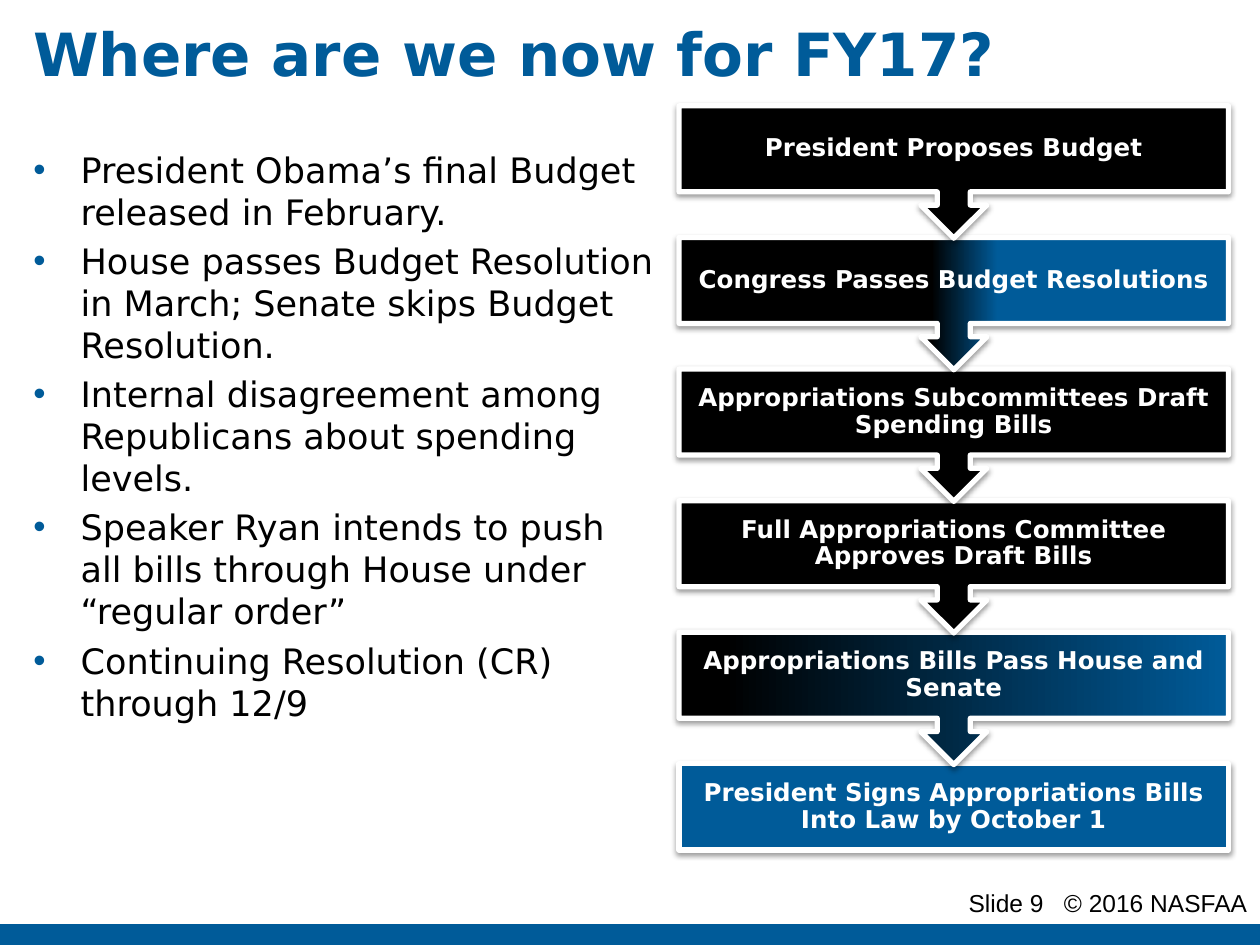
"""Build the FY17 budget status slide with its process flow."""
import pptx
import pptx.dml.color
import pptx.enum.shapes
import pptx.enum.text
import pptx.oxml
import pptx.oxml.ns
import pptx.util

Pt = pptx.util.Pt
RGBColor = pptx.dml.color.RGBColor
SHAPE = pptx.enum.shapes.MSO_SHAPE
ALIGN = pptx.enum.text.PP_ALIGN
ANCHOR = pptx.enum.text.MSO_ANCHOR

BLUE = RGBColor(0x00, 0x5B, 0x99)
BLACK = RGBColor(0x00, 0x00, 0x00)
WHITE = RGBColor(0xFF, 0xFF, 0xFF)
NAMESPACE = pptx.oxml.ns.nsdecls("a")

POINTS = [
    "President Obama’s final Budget released in February.",
    "House passes Budget Resolution in March; Senate skips Budget Resolution.",
    "Internal disagreement among Republicans about spending levels.",
    "Speaker Ryan intends to push all bills through House under “regular order”",
    "Continuing Resolution (CR) through 12/9",
]
SPLIT = (180, (0.46, BLACK), (0.58, BLUE))
FADE = (0, (0, BLUE), (0.92, BLACK))
STEPS = [
    ("President Proposes Budget", BLACK),
    ("Congress Passes Budget Resolutions", SPLIT),
    ("Appropriations Subcommittees Draft Spending Bills", BLACK),
    ("Full Appropriations Committee Approves Draft Bills", BLACK),
    ("Appropriations Bills Pass House and Senate", FADE),
    ("President Signs Appropriations Bills Into Law by October 1", BLUE),
]
FLOW_LEFT, FLOW_TOP, FLOW_WIDTH = 388, 60.5, 314
STEP_PITCH, CALLOUT_HEIGHT, STEP_HEIGHT = 75.2, 75.6, 49.2


class SlideBuilder:
    def __init__(self, slide, font="DejaVu Sans"):
        self.slide = slide
        self.font = font

    def text(self, box, lines, size, color, bold=False, align=ALIGN.LEFT,
             anchor=ANCHOR.TOP, font=None):
        frame = self.slide.shapes.add_textbox(*map(Pt, box)).text_frame
        frame.word_wrap = True
        frame.vertical_anchor = anchor
        frame.text = "\n".join(lines)
        for paragraph in frame.paragraphs:
            paragraph.alignment = align
            for run in paragraph.runs:
                run.font.name = font or self.font
                run.font.size = Pt(size)
                run.font.bold = bold
                run.font.color.rgb = color
        return frame

    def bullets(self, box, lines, size):
        frame = self.text(box, lines, size, BLACK)
        for index, paragraph in enumerate(frame.paragraphs):
            if index:
                paragraph.space_before = Pt(size * 0.2)
            properties = paragraph._p.get_or_add_pPr()
            properties.set("marL", str(Pt(27)))
            properties.set("indent", str(Pt(-27)))
            for element in (
                f'<a:buClr {NAMESPACE}><a:srgbClr val="{BLUE}"/></a:buClr>',
                f'<a:buFont {NAMESPACE} typeface="Arial"/>',
                f'<a:buChar {NAMESPACE} char="•"/>',
            ):
                properties.append(pptx.oxml.parse_xml(element))

    def footer(self, box, parts, indent, tab):
        frame = self.text(box, ["\t".join(parts)], 14, BLACK, font="Arial")
        frame.margin_left, frame.margin_right = Pt(indent), 0
        frame.paragraphs[0]._p.get_or_add_pPr().append(pptx.oxml.parse_xml(
            f'<a:tabLst {NAMESPACE}><a:tab pos="{Pt(tab)}" algn="l"/></a:tabLst>'))

    def shape(self, kind, box, fill):
        shape = self.slide.shapes.add_shape(kind, *map(Pt, box))
        shape.shadow.inherit = False
        if isinstance(fill, RGBColor):
            shape.fill.solid()
            shape.fill.fore_color.rgb = fill
        else:
            angle, *stops = fill
            shape.fill.gradient()
            shape.fill.gradient_angle = angle
            for stop, (position, color) in zip(shape.fill.gradient_stops, stops):
                stop.position = position
                stop.color.rgb = color
        shape.line.fill.background()
        return shape

    def step(self, top, label, fill, last):
        kind = SHAPE.RECTANGLE if last else SHAPE.UP_ARROW_CALLOUT
        height = STEP_HEIGHT if last else CALLOUT_HEIGHT
        panel = self.shape(kind, (FLOW_LEFT, top, FLOW_WIDTH, height), fill)
        panel.rotation = 0 if last else 180
        panel.line.color.rgb = WHITE
        panel.line.width = Pt(3)
        effects = panel._element.spPr.find(pptx.oxml.ns.qn("a:effectLst"))
        effects.append(pptx.oxml.parse_xml(
            f'<a:outerShdw {NAMESPACE} blurRad="{Pt(3.1)}" dist="{Pt(1.6)}" '
            f'dir="5400000" rotWithShape="0"><a:srgbClr val="{BLACK}">'
            '<a:alpha val="38000"/></a:srgbClr></a:outerShdw>'))
        frame = self.text((FLOW_LEFT, top, FLOW_WIDTH, STEP_HEIGHT), [label], 14,
                          WHITE, True, ALIGN.CENTER, ANCHOR.MIDDLE)
        frame.margin_left = frame.margin_right = Pt(7.9)
        frame.margin_top = frame.margin_bottom = Pt(7.9)
        frame.paragraphs[0].line_spacing = 0.9
        frame.paragraphs[0].space_after = Pt(4.9)


def main():
    deck = pptx.Presentation()
    deck.slide_width, deck.slide_height = Pt(720), Pt(540)
    builder = SlideBuilder(deck.slides.add_slide(deck.slide_layouts[6]))
    builder.shape(SHAPE.RECTANGLE, (0, 528, 720, 12), BLUE)
    builder.footer((504, 504, 216, 18), ["Slide 9", "© 2016 NASFAA"], 49.5, 54.5)
    builder.text((12, 0, 690, 60), ["Where are we now for FY17?"], 34, BLUE,
                 bold=True, anchor=ANCHOR.MIDDLE)
    builder.bullets((12, 81.5, 370, 359), POINTS, 20)
    final = len(STEPS) - 1
    for index, (label, fill) in reversed(list(enumerate(STEPS))):
        builder.step(FLOW_TOP + index * STEP_PITCH, label, fill, index == final)
    deck.save("out.pptx")


if __name__ == "__main__":
    main()
